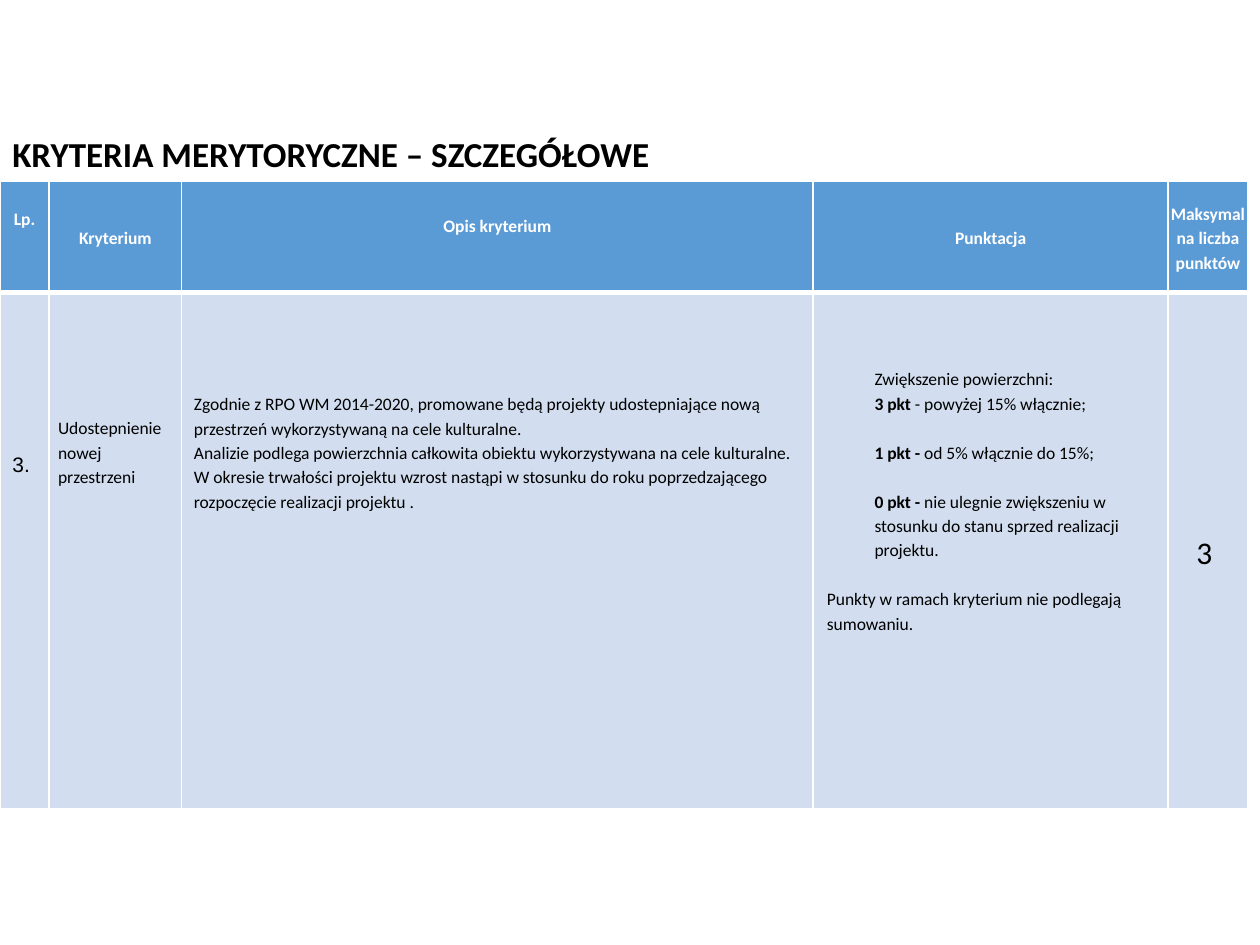
from dataclasses import dataclass

from lxml.etree import SubElement
from pptx import Presentation
from pptx.dml.color import RGBColor as Rgb
from pptx.enum.text import MSO_ANCHOR as Anchor, MSO_AUTO_SIZE as AutoSize, PP_ALIGN as Align
from pptx.oxml.ns import qn
from pptx.util import Cm, Pt


@dataclass(frozen=True)
class Theme:
    header: str = "5B9BD5"
    body: str = "D2DEEF"
    white: str = "FFFFFF"
    black: str = "000000"
    font: str = "Calibri"
    number_font: str = "Arial"
    title_size: int = 20
    points_size: int = 18
    number_size: int = 12
    text_size: int = 10
    spacing: float = 1.15
    gap: int = 14  # one line of table text, in points


THEME = Theme()
COLUMNS = (0.99, 2.67, 12.73, 7.16, 1.6)
ROWS = (2.24, 10.41)


def put_text(frame, text, *, lead="", size=THEME.text_size, font=THEME.font,
             color=THEME.black, bold=False, align=Align.LEFT,
             spacing=THEME.spacing, before=0, indent=0):
    """Add a paragraph, with an optional bold lead, to a text frame."""
    last = frame.paragraphs[-1]
    paragraph = frame.add_paragraph() if last.runs else last
    paragraph.alignment = align
    paragraph.line_spacing = spacing
    paragraph.space_before = Pt(before)
    if indent:
        properties = paragraph._p.get_or_add_pPr()
        properties.set("marL", str(Cm(indent)))
        properties.set("indent", "0")
    for words, heavy in ((lead, True), (text, bold)):
        if words:
            run = paragraph.add_run()
            run.text = words
            run.font.name, run.font.size, run.font.bold = font, Pt(size), heavy
            run.font.color.rgb = Rgb.from_string(color)


def set_borders(cell, **widths):
    """Draw white borders; widths are points keyed by L, R, T and B."""
    properties = cell._tc.get_or_add_tcPr()
    for index, (side, width) in enumerate(widths.items()):
        line = SubElement(properties, qn(f"a:ln{side}"), w=str(Pt(width)))
        fill = SubElement(line, qn("a:solidFill"))
        SubElement(fill, qn("a:srgbClr"), val=THEME.white)
        properties.insert(index, line)


def format_cell(cell, fill, side=0.0, top=0.0, bottom=0.0, anchor=Anchor.MIDDLE):
    cell.fill.solid()
    cell.fill.fore_color.rgb = Rgb.from_string(fill)
    cell.margin_left = cell.margin_right = Cm(side)
    cell.margin_top, cell.margin_bottom = Cm(top), Cm(bottom)
    cell.vertical_anchor = anchor
    return cell.text_frame


def add_title(slide, left, top, width, height):
    frame = slide.shapes.add_textbox(Cm(left), Cm(top), Cm(width), Cm(height)).text_frame
    frame.word_wrap = False
    frame.auto_size = AutoSize.SHAPE_TO_FIT_TEXT
    frame.vertical_anchor = Anchor.MIDDLE
    put_text(frame, "KRYTERIA MERYTORYCZNE – SZCZEGÓŁOWE",
             size=THEME.title_size, bold=True, spacing=1.0)


def fill_header(cells):
    headings = (
        ("Lp.", dict(side=0.18, top=0.49, anchor=Anchor.TOP)),
        ("Kryterium", dict(side=0.18)),
        ("Opis kryterium", dict(side=0.18, bottom=0.49)),
        ("Punktacja", {}),
        ("Maksymalna liczba punktów", {}),
    )
    for cell, (heading, layout) in zip(cells, headings):
        frame = format_cell(cell, THEME.header, **layout)
        put_text(frame, heading, color=THEME.white, bold=True, align=Align.CENTER)
        set_borders(cell, L=1, R=1, T=1, B=3)


def fill_criterion(cells):
    layouts = (
        dict(side=0.25, top=3.23, anchor=Anchor.TOP),
        dict(side=0.18, top=2.47, anchor=Anchor.TOP),
        dict(top=1.98, anchor=Anchor.TOP),
        dict(top=1.48, anchor=Anchor.TOP),
        {},
    )
    number, name, description, scoring, maximum = (
        format_cell(cell, THEME.body, **layout) for cell, layout in zip(cells, layouts))
    for cell in cells:
        set_borders(cell, L=1, R=1, T=3, B=1)

    put_text(number, "3.", size=THEME.number_size, font=THEME.number_font, spacing=1.0)
    put_text(name, "Udostepnienie nowej przestrzeni")
    for sentence in (
        "Zgodnie z RPO WM 2014-2020, promowane będą projekty udostepniające nową "
        "przestrzeń wykorzystywaną na cele kulturalne.",
        "Analizie podlega powierzchnia całkowita obiektu wykorzystywana na cele kulturalne.",
        "W okresie trwałości projektu wzrost nastąpi w stosunku do roku poprzedzającego "
        "rozpoczęcie realizacji projektu .",
    ):
        put_text(description, sentence, indent=0.25)

    # Scoring scale and its closing remark
    for lead, rule, before, indent in (
        ("", "Zwiększenie powierzchni:", 0, 1.24),
        ("3 pkt ", "- powyżej 15% włącznie;", 0, 1.24),
        ("1 pkt - ", "od 5% włącznie do 15%;", THEME.gap, 1.24),
        ("0 pkt - ", "nie ulegnie zwiększeniu w stosunku do stanu sprzed realizacji projektu.",
         THEME.gap, 1.24),
        ("", "Punkty w ramach kryterium nie podlegają sumowaniu.", THEME.gap, 0.28),
    ):
        put_text(scoring, rule, lead=lead, before=before, indent=indent)
    put_text(maximum, "3 ", size=THEME.points_size, align=Align.CENTER)


def add_criteria(slide, left, top):
    table = slide.shapes.add_table(
        len(ROWS), len(COLUMNS), Cm(left), Cm(top), Cm(sum(COLUMNS)), Cm(sum(ROWS))).table
    table.first_row = table.horz_banding = False
    for column, width in zip(table.columns, COLUMNS):
        column.width = Cm(width)
    for row, height in zip(table.rows, ROWS):
        row.height = Cm(height)
    header, criterion = table.rows
    fill_header(list(header.cells))
    fill_criterion(list(criterion.cells))


def main():
    deck = Presentation()
    deck.slide_width, deck.slide_height = Cm(25.4), Cm(19.05)
    slide = deck.slides.add_slide(deck.slide_layouts[6])
    add_title(slide, 0, 2.54, 13.77, 1.11)
    add_criteria(slide, 0, 3.66)
    deck.save("out.pptx")


if __name__ == "__main__":
    main()
